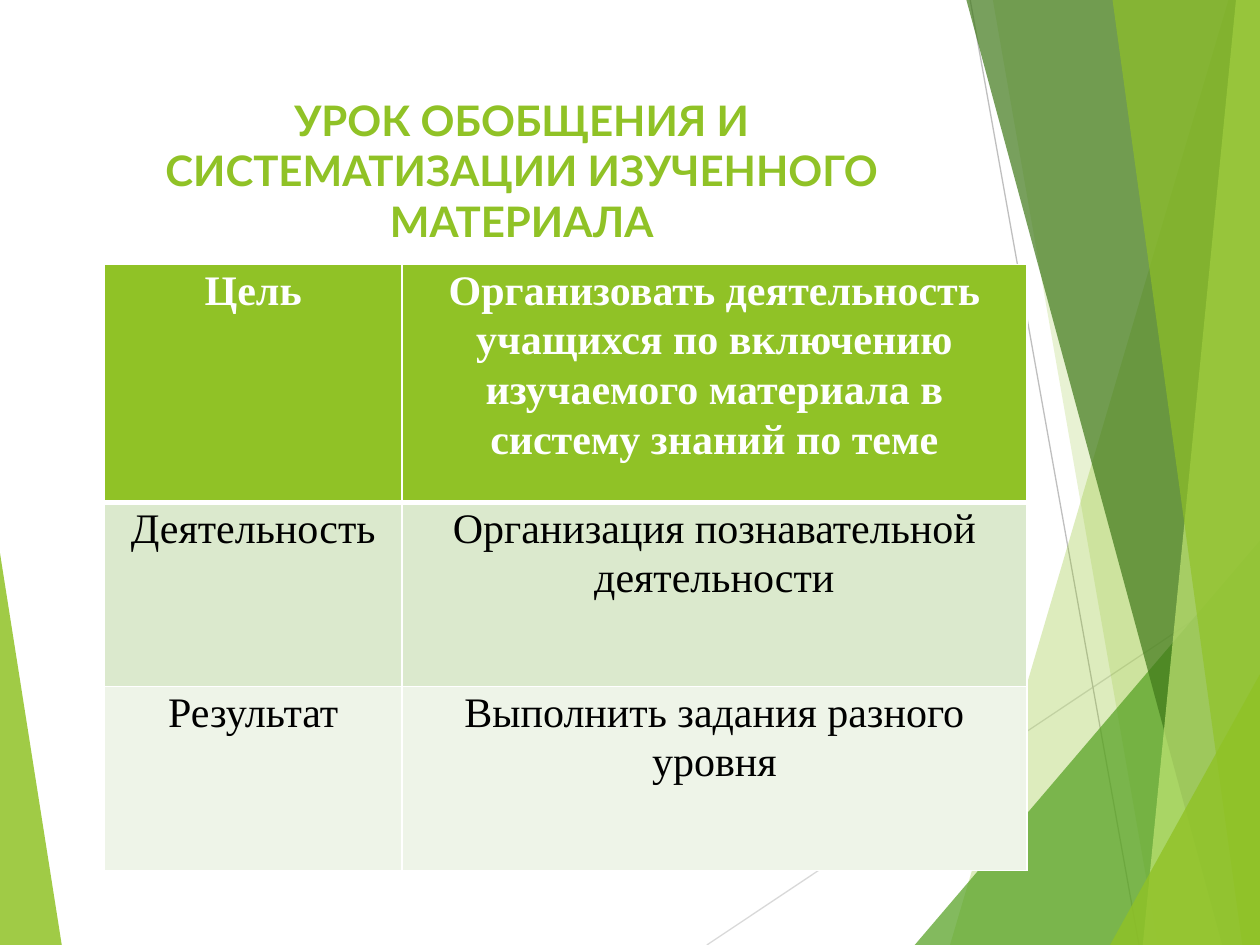
from lxml.etree import SubElement
from pptx import Presentation
from pptx.dml.color import RGBColor
from pptx.enum.shapes import MSO_CONNECTOR
from pptx.enum.text import MSO_ANCHOR, PP_ALIGN
from pptx.oxml.ns import qn
from pptx.util import Inches, Pt

GREEN = "90C226"
WIDTH, HEIGHT = 10, 7.5


def color(hex_value):
    return RGBColor.from_string(hex_value)


def write(frame, text, font="Times New Roman", size=24, ink="000000",
          bold=False, spacing=None, insets=(0.1, 0.05)):
    frame.word_wrap = True
    frame.margin_left = frame.margin_right = Inches(insets[0])
    frame.margin_top = frame.margin_bottom = Inches(insets[1])
    para = frame.paragraphs[0]
    para.alignment = PP_ALIGN.CENTER
    para.line_spacing = spacing
    span = para.add_run()
    span.text = text
    span.font.name = font
    span.font.size = Pt(size)
    span.font.bold = bold
    span.font.color.rgb = color(ink)


class SlideBuilder:
    def __init__(self, page):
        self.page = page

    def polygon(self, points, fill, opacity):
        corners = [(Inches(x), Inches(y)) for x, y in points]
        builder = self.page.shapes.build_freeform(*corners[0])
        builder.add_line_segments(corners[1:], close=True)
        shape = builder.convert_to_shape()
        shape.shadow.inherit = False
        shape.line.fill.background()
        shape.fill.solid()
        shape.fill.fore_color.rgb = color(fill)
        tint = shape.fill._xPr.find(".//" + qn("a:srgbClr"))
        SubElement(tint, qn("a:alpha"), val=str(opacity * 1000))

    def line(self, start, end, ink):
        connector = self.page.shapes.add_connector(
            MSO_CONNECTOR.STRAIGHT, *map(Inches, start + end))
        connector.line.color.rgb = color(ink)
        connector.line.width = Pt(0.75)
        SubElement(connector._element.spPr, qn("a:effectLst"))

    def title(self, text, left, top, width, height):
        box = self.page.shapes.add_textbox(*map(Inches, (left, top, width, height)))
        box.text_frame.vertical_anchor = MSO_ANCHOR.TOP
        write(box.text_frame, text, font="Lato", ink=GREEN, bold=True)

    def borders(self, cell, bottom):
        properties = cell._tc.get_or_add_tcPr()
        for side, width in (("L", 1), ("R", 1), ("T", 1), ("B", bottom)):
            edge = SubElement(properties, qn("a:ln" + side), w=str(Pt(width)))
            fill = SubElement(edge, qn("a:solidFill"))
            SubElement(fill, qn("a:srgbClr"), val="FFFFFF")

    def table(self, rows, fills, left, top, widths, heights):
        table = self.page.shapes.add_table(
            len(rows), len(widths), Inches(left), Inches(top),
            Inches(sum(widths)), Inches(sum(heights))).table
        for column, width in zip(table.columns, widths):
            column.width = Inches(width)
        for index, texts in enumerate(rows):
            header = index == 0
            table.rows[index].height = Inches(heights[index])
            for cell, text in zip(table.rows[index].cells, texts):
                self.borders(cell, bottom=3 if header else 1)
                cell.fill.solid()
                cell.fill.fore_color.rgb = color(fills[index])
                cell.margin_left = cell.margin_right = Inches(0.07)
                cell.margin_top = cell.margin_bottom = 0
                write(cell.text_frame, text, bold=header, spacing=1.07,
                      ink="FFFFFF" if header else "000000", insets=(0.07, 0))


def main():
    deck = Presentation()
    deck.slide_width, deck.slide_height = Inches(WIDTH), Inches(HEIGHT)
    builder = SlideBuilder(deck.slides.add_slide(deck.slide_layouts[6]))

    # Left wedge and thin lines
    builder.polygon([(0, 4.39), (0.49, HEIGHT), (0, HEIGHT)], GREEN, 85)
    builder.line((5.61, HEIGHT), (WIDTH, 4.57), "D9D9D9")
    builder.line((7.7, 0), (9.04, HEIGHT), "BFBFBF")

    # Right facets: top x, top y, bottom x, fill, opacity
    facets = [
        (9.75, 0, 7.54, GREEN, 30),
        (7.88, 0, 9.19, GREEN, 20),
        (WIDTH, 4.29, 7.26, "54A021", 72),
        (7.67, 0, 9.7, "3F7819", 70),
        (9.81, 0, 9.07, "C0E474", 70),
        (8.83, 0, 9.86, GREEN, 65),
        (WIDTH, 5.35, 8.81, GREEN, 80),
    ]
    for top_x, top_y, bottom_x, fill, opacity in facets:
        builder.polygon([(top_x, top_y), (bottom_x, HEIGHT),
                         (WIDTH, HEIGHT), (WIDTH, top_y)], fill, opacity)

    # Title and lesson table
    builder.title("УРОК ОБОБЩЕНИЯ И СИСТЕМАТИЗАЦИИ ИЗУЧЕННОГО МАТЕРИАЛА",
                  0.67, 0.7, 6.94, 0.93)
    rows = [
        ("Цель", "Организовать деятельность учащихся по включению "
                 "изучаемого материала в систему знаний по теме"),
        ("Деятельность", "Организация познавательной деятельности"),
        ("Результат", "Выполнить задания разного уровня"),
    ]
    builder.table(rows, (GREEN, "DBE9CD", "EEF4E8"), 0.83, 2.1,
                  widths=(2.36, 4.96), heights=(1.89, 1.46, 1.46))

    deck.save("out.pptx")


if __name__ == "__main__":
    main()
